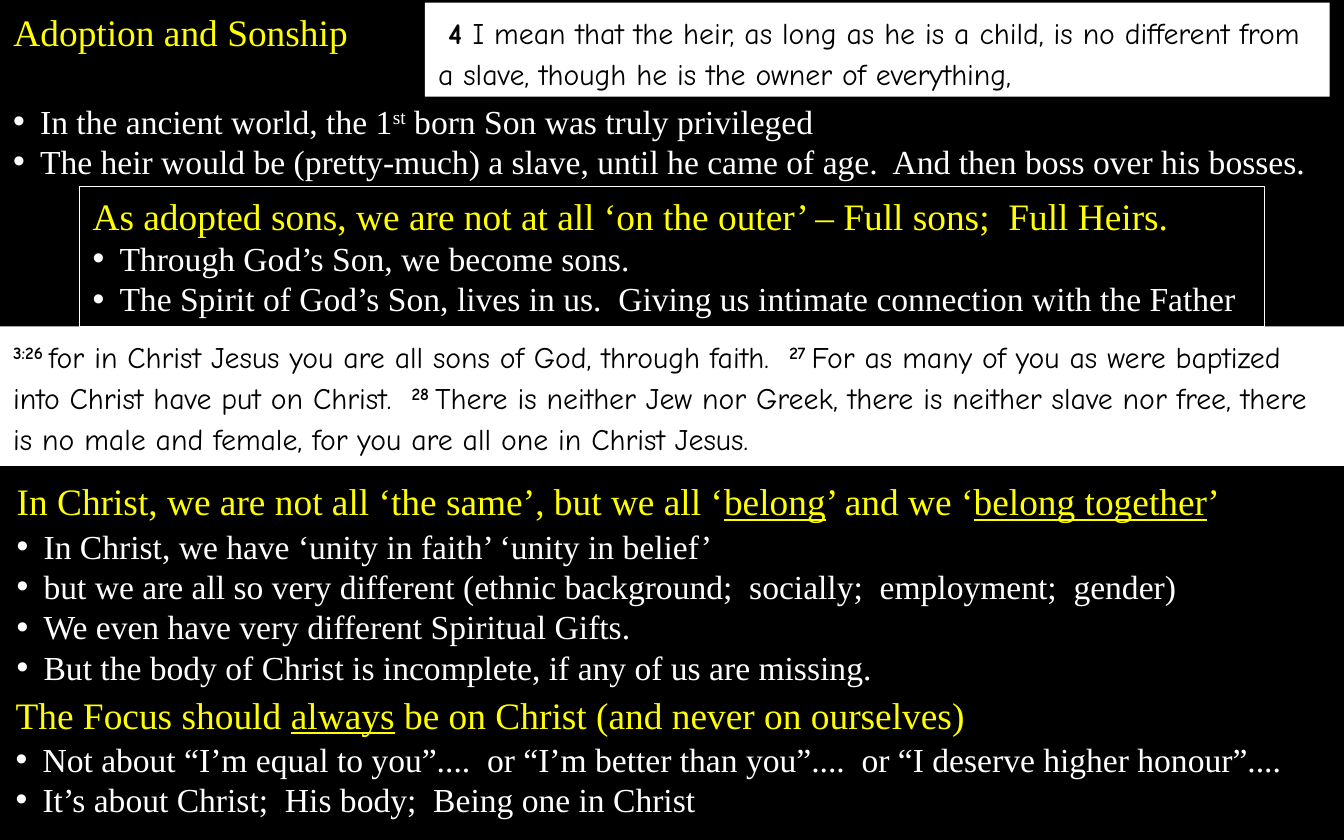
from lxml.etree import SubElement
from pptx import Presentation
from pptx.dml.color import RGBColor
from pptx.enum.shapes import MSO_SHAPE
from pptx.enum.text import MSO_ANCHOR, MSO_AUTO_SIZE, PP_ALIGN
from pptx.oxml.ns import qn
from pptx.util import Cm, Pt

BLACK, WHITE, YELLOW = "000000", "FFFFFF", "FFFF00"
SERIF, HANDWRITTEN = "Times New Roman", "Comic Neue"
SLIDE_WIDTH, SLIDE_HEIGHT = 25.4, 15.88
HEADING_HEIGHT = 1.12
BULLET_INDENT = 0.51

# Run styles: a run is a plain string or a (text, style) pair.
BOLD = {"bold": True}
UNDERLINED = {"underline": True}
RAISED = {"raised": True}
VERSE_NUMBER = {"bold": True, "raised": True}

TITLE = ["Adoption and Sonship"]
HEIR_VERSE = [
    " ", ("4 ", BOLD),
    "I mean that the heir, as long as he is a child, is no different from a slave, "
    "though he is the owner of everything,",
]
ANCIENT_WORLD = [
    ["In the ancient world, the 1", ("st", RAISED), " born Son was truly privileged"],
    ["The heir would be (pretty-much) a slave, until he came of age.  And then boss over his bosses."],
]
ADOPTED_HEADING = ["As adopted sons, we are not at all ‘on the outer’ – Full sons;  Full Heirs."]
ADOPTED_POINTS = [
    ["Through God’s Son, we become sons."],
    ["The Spirit of God’s Son, lives in us.  Giving us intimate connection with the Father"],
]
UNITY_VERSES = [
    ("3:26 ", VERSE_NUMBER), "for in Christ Jesus you are all sons of God, through faith.  ",
    ("27 ", VERSE_NUMBER), "For as many of you as were baptized into Christ have put on Christ.  ",
    ("28 ", VERSE_NUMBER),
    "There is neither Jew nor Greek, there is neither slave nor free, there is no male and female, "
    "for you are all one in Christ Jesus.",
]
BELONG_HEADING = [
    "In Christ, we are not all ‘the same’, but we all ‘", ("belong", UNDERLINED),
    "’ and we ‘", ("belong together", UNDERLINED), "’",
]
BELONG_POINTS = [
    ["In Christ, we have ‘unity in faith’ ‘unity in belief’"],
    ["but we are all so very different (ethnic background;  socially;  employment;  gender)"],
    ["We even have very different Spiritual Gifts."],
    ["But the body of Christ is incomplete, if any of us are missing."],
]
FOCUS_HEADING = [
    "The Focus should ", ("always", UNDERLINED), " be on Christ (and never on ourselves)",
]
FOCUS_POINTS = [
    ["Not about “I’m equal to you”....  or “I’m better than you”....  or “I deserve higher honour”...."],
    ["It’s about Christ;  His body;  Being one in Christ"],
]


def color(hex_string):
    return RGBColor.from_string(hex_string)


def place(shape, left, top, width, height):
    shape.left, shape.top, shape.width, shape.height = map(Cm, (left, top, width, height))


def prepare_frame(shape):
    """Make the text wrap from the top at its own size, and return the frame."""
    frame = shape.text_frame
    frame.word_wrap = True
    frame.auto_size = MSO_AUTO_SIZE.NONE
    frame.vertical_anchor = MSO_ANCHOR.TOP
    return frame


def write_runs(paragraph, runs, size, hex_string, font_name=SERIF):
    paragraph.alignment = PP_ALIGN.LEFT
    paragraph.space_before = Pt(0)
    for item in runs:
        text, style = (item, {}) if isinstance(item, str) else item
        run = paragraph.add_run()
        run.text = text
        font = run.font
        font.name, font.size = font_name, Pt(size)
        font.color.rgb = color(hex_string)
        font.bold = style.get("bold", False)
        font.underline = style.get("underline", False)
        if style.get("raised"):
            run._r.get_or_add_rPr().set("baseline", "30000")


def write_heading(paragraph, runs):
    write_runs(paragraph, runs, 20, YELLOW)


def add_bullet(paragraph):
    properties = paragraph._p.get_or_add_pPr()
    properties.set("marL", str(Cm(BULLET_INDENT)))
    properties.set("indent", str(-Cm(BULLET_INDENT)))
    SubElement(properties, qn("a:buFont"), typeface="Arial")
    SubElement(properties, qn("a:buChar"), char="•")


def write_points(frame, points, append=False):
    for index, runs in enumerate(points):
        is_first = index == 0 and not append
        paragraph = frame.paragraphs[0] if is_first else frame.add_paragraph()
        write_runs(paragraph, runs, 18, WHITE)
        add_bullet(paragraph)


def add_rectangle(slide, box, fill=None, line=None):
    shape = slide.shapes.add_shape(MSO_SHAPE.RECTANGLE, *map(Cm, box))
    shape.shadow.inherit = False
    if fill:
        shape.fill.solid()
        shape.fill.fore_color.rgb = color(fill)
    else:
        shape.fill.background()
    if line:
        shape.line.color.rgb = color(line)
        shape.line.width = Pt(0.75)
    else:
        shape.line.fill.background()
    return shape


def add_verse_panel(slide, box, runs):
    frame = prepare_frame(add_rectangle(slide, box, fill=WHITE))
    paragraph = frame.paragraphs[0]
    write_runs(paragraph, runs, 16, BLACK, HANDWRITTEN)
    paragraph.line_spacing = 1.15
    paragraph.space_after = Pt(10)


def add_header(slide, left, top, width):
    """Title at the left, verse at the right, opening points below both."""
    title = slide.shapes.title
    place(title, left, top, 7.29, HEADING_HEIGHT)
    write_heading(prepare_frame(title).paragraphs[0], TITLE)

    points = slide.shapes.add_textbox(Cm(left), Cm(top + 1.73), Cm(width), Cm(1.8))
    write_points(prepare_frame(points), ANCIENT_WORLD)

    add_verse_panel(slide, (left + 8.03, top, 17.1, 1.78), HEIR_VERSE)


def add_adoption_panel(slide, box):
    frame = prepare_frame(add_rectangle(slide, box, line=WHITE))
    write_heading(frame.paragraphs[0], ADOPTED_HEADING)
    write_points(frame, ADOPTED_POINTS, append=True)


def fill_section(heading, body, left, top, width, heading_runs, points):
    """Heading with its list just below, in a pair of placeholders."""
    place(heading, left, top, width, HEADING_HEIGHT)
    write_heading(prepare_frame(heading).paragraphs[0], heading_runs)
    place(body, left, top + 0.89, width, 0.3 + 0.76 * len(points))
    write_points(prepare_frame(body), points)


def main():
    presentation = Presentation()
    presentation.slide_width = Cm(SLIDE_WIDTH)
    presentation.slide_height = Cm(SLIDE_HEIGHT)
    # The comparison layout has a title and two pairs of heading and list.
    slide = presentation.slides.add_slide(presentation.slide_layouts.get_by_name("Comparison"))
    slide.background.fill.solid()
    slide.background.fill.fore_color.rgb = color(BLACK)
    placeholders = slide.placeholders

    add_header(slide, 0, 0.05, SLIDE_WIDTH)
    add_adoption_panel(slide, (1.5, 3.53, 22.4, 2.64))
    add_verse_panel(slide, (0, 6.17, SLIDE_WIDTH, 2.64), UNITY_VERSES)
    fill_section(placeholders[1], placeholders[2], 0.06, 8.92, 25.34,
                 BELONG_HEADING, BELONG_POINTS)
    fill_section(placeholders[3], placeholders[4], 0.04, 12.95, 25.34,
                 FOCUS_HEADING, FOCUS_POINTS)
    presentation.save("out.pptx")


if __name__ == "__main__":
    main()
